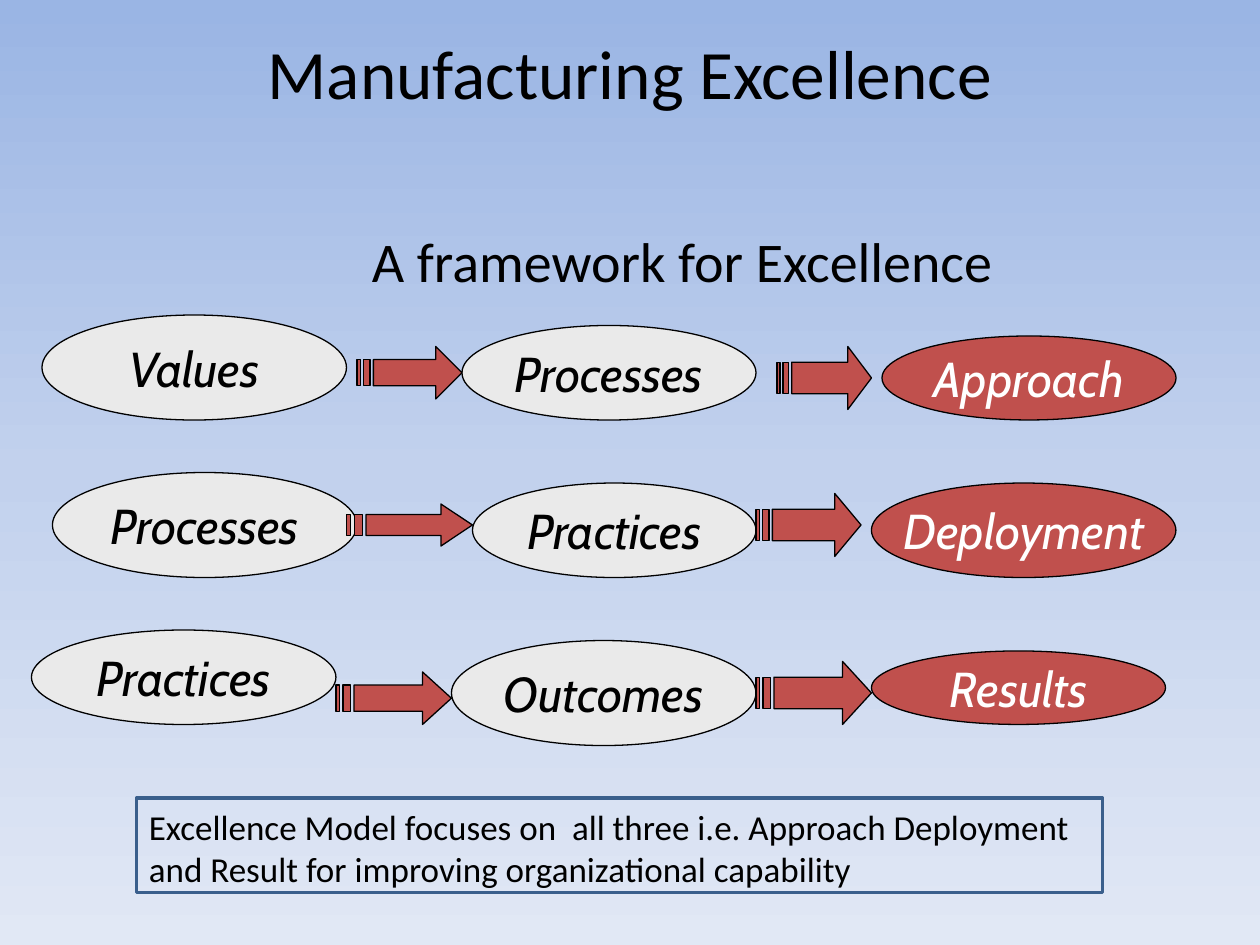
from copy import deepcopy
from dataclasses import dataclass

from pptx import Presentation
from pptx.dml.color import RGBColor
from pptx.enum.shapes import MSO_SHAPE
from pptx.enum.text import MSO_ANCHOR, PP_ALIGN
from pptx.oxml.ns import qn
from pptx.util import Emu, Inches, Pt


@dataclass(frozen=True)
class Theme:
    body_font: str = "Calibri"
    oval_font: str = "Cabin"
    black: str = "000000"
    white: str = "FFFFFF"
    grey: str = "EAEAEA"
    red: str = "C0504D"
    frame: str = "3A5F8C"
    sky: tuple = ((0, "9AB5E4"), (0.5, "C2D1ED"), (1, "E1E8F5"))
    title_size: float = 39.6
    heading_size: float = 32
    oval_size: float = 28
    note_size: float = 20
    thin: float = 0.75
    thick: float = 2


@dataclass(frozen=True)
class Box:
    """A place on the grid, in columns and rows."""
    col: float
    row: float
    cols: float
    rows: float

    def emu(self) -> tuple:
        return tuple(Emu(round(n * CELL)) for n in (self.col, self.row, self.cols, self.rows))


@dataclass(frozen=True)
class Oval:
    text: str
    box: Box
    result: bool = False


THEME = Theme()
CELL = Inches(1) / 12  # the slide is 120 columns by 90 rows

OVALS = (
    Oval("Values", Box(4, 30, 29, 10)),
    Oval("Processes", Box(44, 31, 28, 9)),
    Oval("Approach", Box(84, 32, 28, 8), True),
    Oval("Processes", Box(5, 45, 29, 10)),
    Oval("Practices", Box(45, 46, 27, 9)),
    Oval("Deployment", Box(83, 46, 29, 9), True),
    Oval("Practices", Box(3, 60, 29, 9)),
    Oval("Outcomes", Box(43, 61, 29, 10)),
    Oval("Results", Box(83, 62, 28, 7), True),
)
ARROWS = (
    Box(34, 33, 10, 5), Box(74, 33, 9, 6),
    Box(33, 48, 12, 4), Box(72, 47, 10, 6),
    Box(32, 64, 11, 5), Box(72, 63, 11, 6),
)
# Arrow outlines as shares of width (32nds) and height (quarters)
ARROW_PARTS = (
    ((24, 0), (24, 1), (5, 1), (5, 3), (24, 3), (24, 4), (32, 2)),
    ((2, 1), (2, 3), (4, 3), (4, 1)),
    ((0, 1), (0, 3), (1, 3), (1, 1)),
)


def rgb(value: str) -> RGBColor:
    return RGBColor.from_string(value)


def write(tf, text: str, size: float, color: str = THEME.black,
          font: str = THEME.body_font, align=PP_ALIGN.LEFT, italic: bool = False, **frame) -> None:
    for name, value in frame.items():
        setattr(tf, name, value)
    p = tf.paragraphs[0]
    p.alignment = align
    r = p.add_run()
    r.text = text
    for name, value in {"name": font, "size": Pt(size), "italic": italic}.items():
        setattr(r.font, name, value)
    r.font.color.rgb = rgb(color)


def paint(sp, fill: str | None, line: str, width: float) -> None:
    sp.shadow.inherit = False
    if fill:
        sp.fill.solid()
        sp.fill.fore_color.rgb = rgb(fill)
    else:
        sp.fill.background()
    sp.line.color.rgb = rgb(line)
    sp.line.width = Pt(width)


def draw_sky(s) -> None:
    fill = s.background.fill
    fill.gradient()
    fill.gradient_angle = 270
    stops = s.element.find(".//" + qn("a:gsLst"))
    stops.append(deepcopy(stops[-1]))
    for stop, (position, color) in zip(fill.gradient_stops, THEME.sky):
        stop.position = position
        stop.color.rgb = rgb(color)


def draw_oval(s, oval: Oval) -> None:
    sp = s.shapes.add_shape(MSO_SHAPE.OVAL, *oval.box.emu())
    paint(sp, THEME.red if oval.result else THEME.grey, THEME.black, THEME.thin)
    write(sp.text_frame, oval.text, THEME.oval_size,
          THEME.white if oval.result else THEME.black, THEME.oval_font,
          PP_ALIGN.CENTER, True, word_wrap=False, vertical_anchor=MSO_ANCHOR.MIDDLE)


def draw_arrow(s, box: Box) -> None:
    left, top, width, height = box.emu()
    parts = [[(round(left + x * width / 32), round(top + y * height / 4)) for x, y in part]
             for part in ARROW_PARTS]
    outline = s.shapes.build_freeform(*parts[0][0])
    for i, points in enumerate(parts):
        if i:
            outline.move_to(*points[0])
        outline.add_line_segments(points[1:], close=True)
    paint(outline.convert_to_shape(), THEME.red, THEME.black, THEME.thin)


def main() -> None:
    prs = Presentation()
    prs.slide_width, prs.slide_height = Inches(10), Inches(7.5)
    s = prs.slides.add_slide(prs.slide_layouts[5])
    draw_sky(s)

    # Title and heading
    title = s.shapes.title
    title.left, title.top, title.width, title.height = Box(6, 3.6, 108, 6.4).emu()
    write(title.text_frame, "Manufacturing Excellence", THEME.title_size,
          align=PP_ALIGN.CENTER, vertical_anchor=MSO_ANCHOR.MIDDLE)
    heading = s.shapes.add_textbox(*Box(3, 21, 111, 66).emu())
    write(heading.text_frame, "A framework for Excellence", THEME.heading_size,
          align=PP_ALIGN.CENTER, word_wrap=True, margin_left=Inches(1.18))

    # Framed note
    frame = s.shapes.add_shape(MSO_SHAPE.RECTANGLE, *Box(13, 76, 92, 9).emu())
    paint(frame, None, THEME.frame, THEME.thick)
    note = s.shapes.add_textbox(*Box(13, 76, 95, 9.3).emu())
    write(note.text_frame,
          "Excellence Model focuses on  all three i.e. Approach Deployment "
          "and Result for improving organizational capability",
          THEME.note_size, word_wrap=True, vertical_anchor=MSO_ANCHOR.BOTTOM)

    # Three chains of ovals and arrows
    for oval in OVALS:
        draw_oval(s, oval)
    for box in ARROWS:
        draw_arrow(s, box)

    prs.save("out.pptx")


if __name__ == "__main__":
    main()
